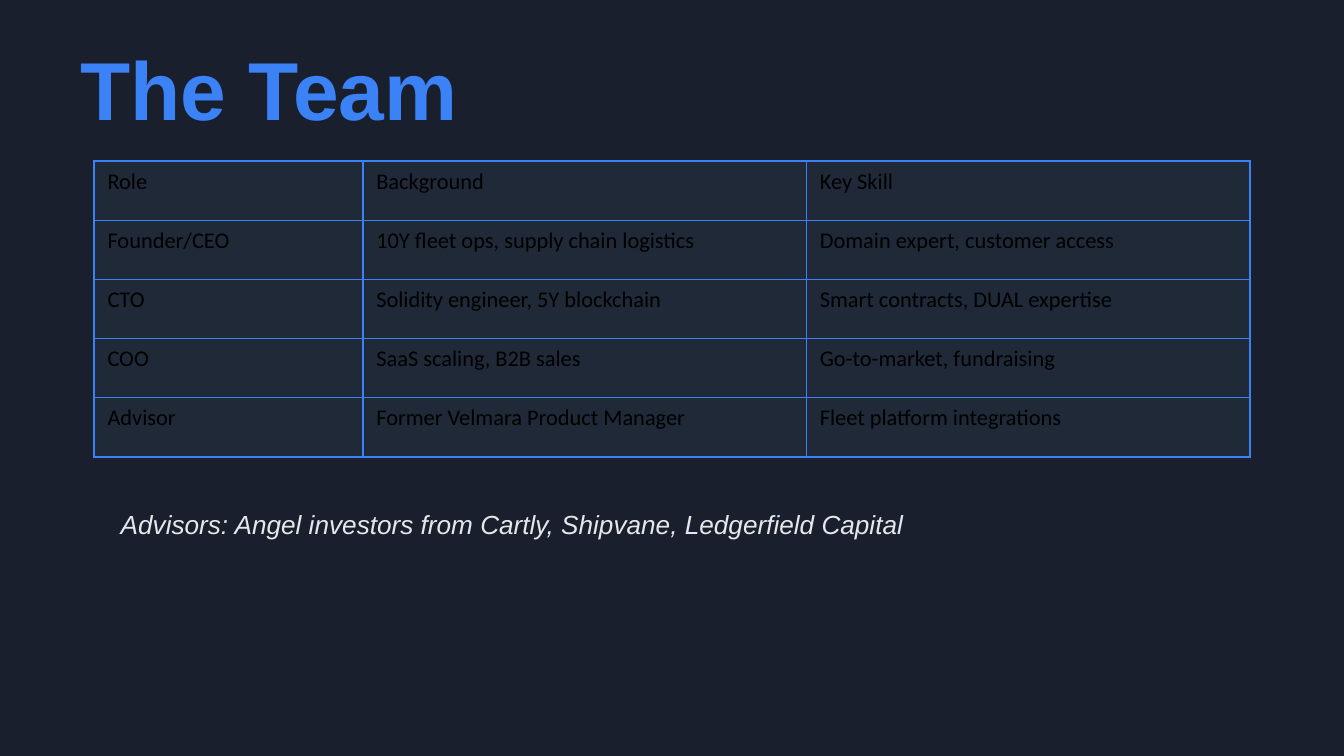
from lxml import etree
from pptx import Presentation, util as u
from pptx.dml.color import RGBColor
from pptx.enum import text
from pptx.oxml import ns

NAVY = RGBColor(0x1A, 0x1F, 0x2E)
SLATE = RGBColor(0x1F, 0x29, 0x37)
BLUE = RGBColor(0x3B, 0x82, 0xF6)
PALE = RGBColor(0xE5, 0xE7, 0xEB)
BLACK = RGBColor(0, 0, 0)

SLIDE_WIDTH = u.Inches(10)
SLIDE_HEIGHT = SLIDE_WIDTH * 9 // 16
GRID = SLIDE_WIDTH // 100
TITLE_BOX = (5, 4, 90, 5)
TABLE_BOX = (7, 12, 86, 22)
ADVISORS_BOX = (8, 37, 84, 4)
COLUMN_SHARES = (20, 33, 33)

TEAM = [
    ("Role", "Background", "Key Skill"),
    ("Founder/CEO", "10Y fleet ops, supply chain logistics", "Domain expert, customer access"),
    ("CTO", "Solidity engineer, 5Y blockchain", "Smart contracts, DUAL expertise"),
    ("COO", "SaaS scaling, B2B sales", "Go-to-market, fundraising"),
    ("Advisor", "Former Velmara Product Manager", "Fleet platform integrations"),
]


def on_grid(box):
    return [GRID * units for units in box]


def write(frame, words, size, color, font="Arial", bold=False, italic=False):
    span = frame.paragraphs[0].add_run()
    span.text = words
    span.font.name = font
    span.font.size = u.Pt(size)
    span.font.color.rgb = color
    span.font.bold = bold
    span.font.italic = italic


def add_line_of_text(page, box, words, **look):
    frame = page.shapes.add_textbox(*on_grid(box)).text_frame
    frame.word_wrap = True
    frame.vertical_anchor = text.MSO_ANCHOR.MIDDLE
    write(frame, words, **look)


def outline_cell(cell, color, width):
    properties = cell._tc.get_or_add_tcPr()
    for position, side in enumerate(("lnL", "lnR", "lnT", "lnB")):
        line = etree.Element(ns.qn(f"a:{side}"), w=str(u.Pt(width)))
        fill = etree.SubElement(line, ns.qn("a:solidFill"))
        etree.SubElement(fill, ns.qn("a:srgbClr"), val=str(color))
        properties.insert(position, line)


def add_team_table(page, box, rows):
    left, top, width, height = on_grid(box)
    table = page.shapes.add_table(
        len(rows), len(COLUMN_SHARES), left, top, width, height
    ).table
    table.first_row = False
    table.horz_banding = False
    for column, share in zip(table.columns, COLUMN_SHARES):
        column.width = width * share // sum(COLUMN_SHARES)
    for row, entries in zip(table.rows, rows):
        row.height = height // len(rows)
        for cell, words in zip(row.cells, entries):
            cell.fill.solid()
            cell.fill.fore_color.rgb = SLATE
            outline_cell(cell, BLUE, 1)
            write(cell.text_frame, words, size=12, color=BLACK, font="Calibri")


def add_team_page(deck):
    page = deck.slides.add_slide(deck.slide_layouts[6])
    page.background.fill.solid()
    page.background.fill.fore_color.rgb = NAVY
    add_line_of_text(page, TITLE_BOX, "The Team", size=44, color=BLUE, bold=True)
    add_team_table(page, TABLE_BOX, TEAM)
    add_line_of_text(
        page,
        ADVISORS_BOX,
        "Advisors: Angel investors from Cartly, Shipvane, Ledgerfield Capital",
        size=14,
        color=PALE,
        italic=True,
    )


def main():
    deck = Presentation()
    deck.slide_width = SLIDE_WIDTH
    deck.slide_height = SLIDE_HEIGHT
    add_team_page(deck)
    deck.save("out.pptx")


if __name__ == "__main__":
    main()
